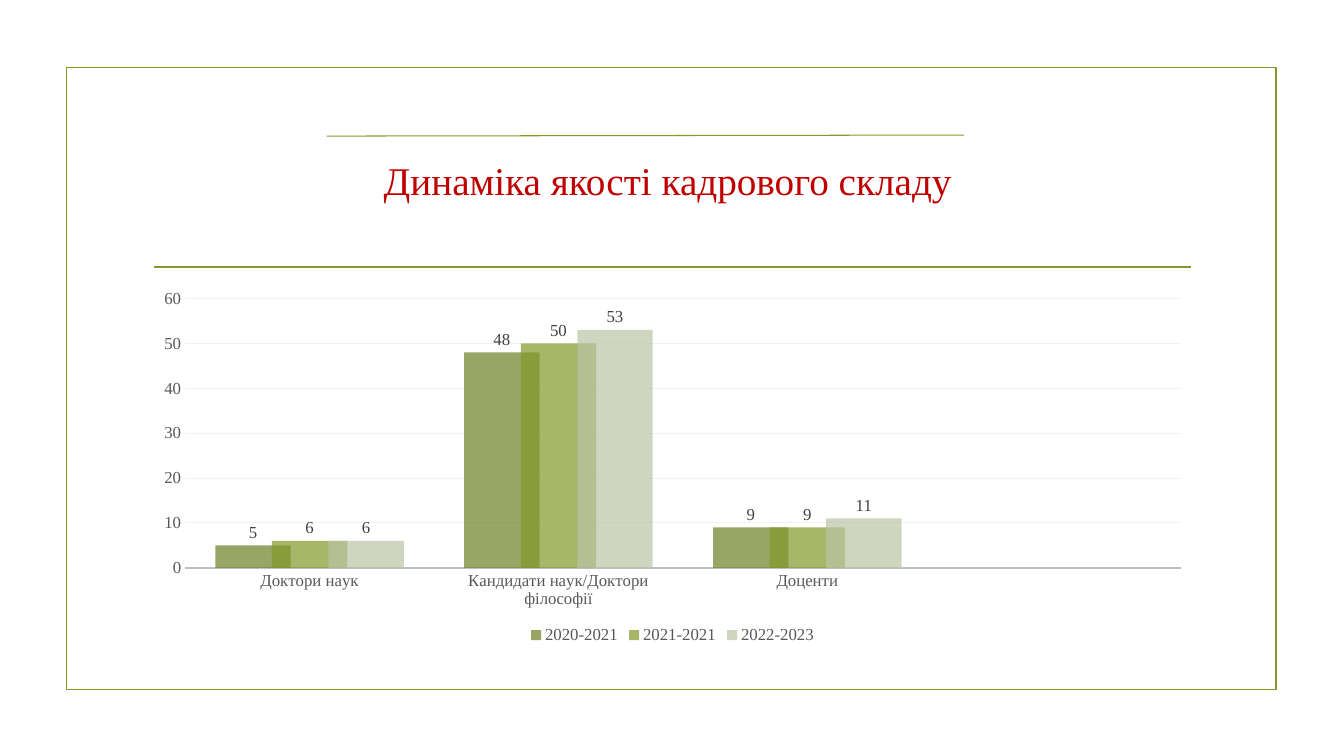
from lxml import etree
from pptx import Presentation
from pptx import util as u
from pptx.chart.data import CategoryChartData
from pptx.dml.color import RGBColor
from pptx.enum import chart as ch, shapes, text
from pptx.oxml.ns import qn

PX = 9144
FONT = "Times New Roman"
COLORS = {
    "olive": "83992A",
    "dark_olive": "6D7F23",
    "pale_olive": "BBC5A4",
    "title": "C00000",
    "axis_text": "595959",
    "label_text": "404040",
    "axis_line": "BFBFBF",
    "grid": "F2F2F2",
}
CATEGORIES = ["Доктори наук", "Кандидати наук/Доктори філософії", "Доценти", ""]
YEARS = [
    ("2020-2021", (5, 48, 9, None), "dark_olive"),
    ("2021-2021", (6, 50, 9, None), "olive"),
    ("2022-2023", (6, 53, 11, None), "pale_olive"),
]


def px(*lengths):
    return [u.Emu(n * PX) for n in lengths]


def rgb(name):
    return RGBColor.from_string(COLORS[name])


def style_font(font, size, color):
    font.name = FONT
    font.size = u.Pt(size)
    font.bold = False
    font.color.rgb = rgb(color)


def style_line(line, color, width):
    line.color.rgb = rgb(color)
    line.width = u.Pt(width)


def add_frame(s, *box):
    sp = s.shapes.add_shape(shapes.MSO_SHAPE.RECTANGLE, *px(*box))
    sp.shadow.inherit = False
    sp.fill.background()
    style_line(sp.line, "olive", 1.25)


def add_rule(s, x1, y1, x2, y2, width):
    cx = s.shapes.add_connector(shapes.MSO_CONNECTOR.STRAIGHT, *px(x1, y1, x2, y2))
    style_line(cx.line, "olive", width)
    etree.SubElement(cx._element.spPr, qn("a:effectLst"))


def set_title(s, title, *box):
    sp = s.shapes.title
    sp.left, sp.top, sp.width, sp.height = px(*box)
    tf = sp.text_frame
    tf.text = title
    tf.word_wrap = True
    tf.vertical_anchor = text.MSO_ANCHOR.MIDDLE
    p = tf.paragraphs[0]
    p.alignment = text.PP_ALIGN.CENTER
    style_font(p.runs[0].font, 28, "title")


def style_series(series, color):
    series.format.fill.solid()
    series.format.fill.fore_color.rgb = rgb(color)
    clr = series._element.xpath("./c:spPr//a:srgbClr")[0]
    etree.SubElement(clr, qn("a:alpha"), val="70000")
    labels = series.data_labels
    labels.show_value = True
    labels.position = ch.XL_LABEL_POSITION.OUTSIDE_END
    style_font(labels.font, 12, "label_text")


def style_axes(chart):
    cat, val = chart.category_axis, chart.value_axis
    for axis in (cat, val):
        axis.major_tick_mark = axis.minor_tick_mark = ch.XL_TICK_MARK.NONE
        style_font(axis.tick_labels.font, 12, "axis_text")
    style_line(cat.format.line, "axis_line", 1.25)
    val.format.line.fill.background()
    val.minimum_scale, val.maximum_scale, val.major_unit = 0, 60, 10
    val.has_major_gridlines = True
    style_line(val.major_gridlines.format.line, "grid", 0.75)


def add_column_chart(s, *box):
    data = CategoryChartData()
    data.categories = CATEGORIES
    for year, values, _ in YEARS:
        data.add_series(year, values)
    kind = ch.XL_CHART_TYPE.COLUMN_CLUSTERED
    chart = s.shapes.add_chart(kind, *px(*box), data).chart
    chart.has_title = False
    chart.font.name = FONT
    chart.font.size = u.Pt(10)
    plot = chart.plots[0]
    plot.gap_width, plot.overlap = 80, 25
    plot.vary_by_categories = False
    for series, (_, _, color) in zip(plot.series, YEARS):
        style_series(series, color)
    style_axes(chart)
    chart.has_legend = True
    chart.legend.position = ch.XL_LEGEND_POSITION.BOTTOM
    chart.legend.include_in_layout = False
    style_font(chart.legend.font, 12, "axis_text")


def main():
    prs = Presentation()
    prs.slide_width, prs.slide_height = px(1333, 750)
    s = prs.slides.add_slide(prs.slide_layouts[5])
    add_frame(s, 66, 67, 1200, 617)
    add_rule(s, 153, 265, 1181, 265, 1.25)
    set_title(s, "Динаміка якості кадрового складу ", 142, 107, 1050, 143)
    add_column_chart(s, 142, 280, 1050, 363)
    add_rule(s, 324, 135, 956, 134, 0.75)
    prs.save("out.pptx")


if __name__ == "__main__":
    main()
